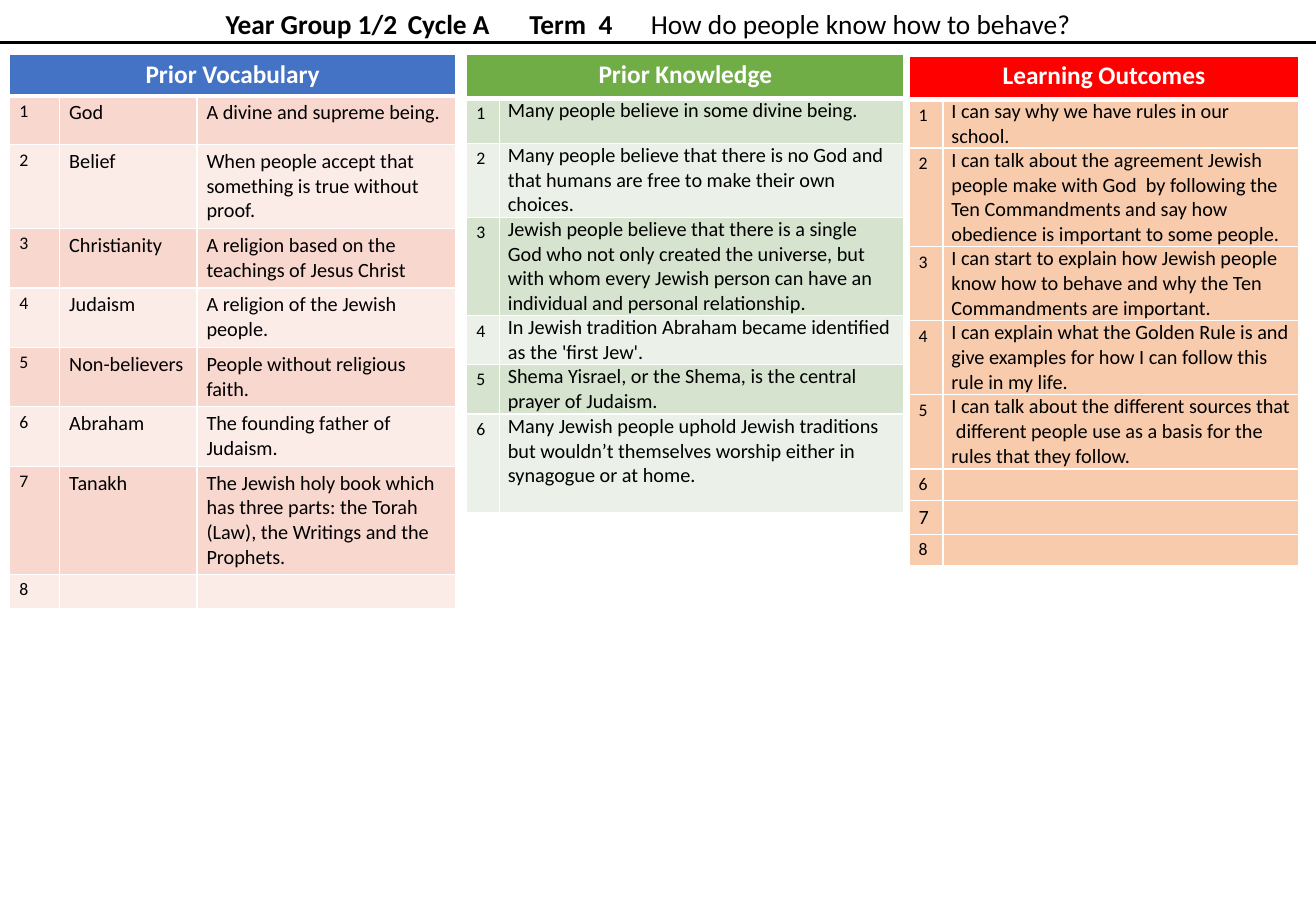
from dataclasses import dataclass

from lxml import etree
from pptx import Presentation
from pptx.dml.color import RGBColor
from pptx.enum import shapes, text
from pptx.oxml import ns
from pptx.util import Inches, Pt


@dataclass(frozen=True)
class Theme:
    font: str = "Calibri"
    black: str = "000000"
    white: str = "FFFFFF"
    blue: str = "4472C4"
    green: str = "70AD47"
    red: str = "FF0000"
    pinks: tuple = ("F8D7CE", "FCECE8")
    sages: tuple = ("D5E3CF", "EBF1E9")
    peach: tuple = ("F8CBAD",)
    title: float = 16.2
    head: float = 15
    body: float = 12
    num: float = 10.5


THEME = Theme()

VOCAB = [
    ("God", "A divine and supreme being."),
    ("Belief", "When people accept that something is true without proof."),
    ("Christianity", "A religion based on the teachings of Jesus Christ"),
    ("Judaism", "A religion of the Jewish people."),
    ("Non-believers", "People without religious faith."),
    ("Abraham", "The founding father of Judaism."),
    ("Tanakh", "The Jewish holy book which has three parts: the Torah (Law), "
               "the Writings and the Prophets."),
    ("", ""),
]
FACTS = [
    ("Many people believe in some divine being.",),
    ("Many people believe that there is no God and that humans are free "
     "to make their own choices.",),
    ("Jewish people believe that there is a single God who not only created "
     "the universe, but with whom every Jewish person can have an individual "
     "and personal relationship.",),
    ("In Jewish tradition Abraham became identified as the 'first Jew'.",),
    ("Shema Yisrael, or the Shema, is the central prayer of Judaism.",),
    ("Many Jewish people uphold Jewish traditions but wouldn’t themselves "
     "worship either in synagogue or at home.",),
]
GOALS = [
    ("I can say why we have rules in our school.",),
    ("I can talk about the agreement Jewish people make with God  by following "
     "the Ten Commandments and say how obedience is important to some people.",),
    ("I can start to explain how Jewish people know how to behave and why "
     "the Ten Commandments are important.",),
    ("I can explain what the Golden Rule is and give examples for how I can "
     "follow this rule in my life.",),
    ("I can talk about the different sources that  different people use as "
     "a basis for the rules that they follow.",),
    ("",), ("",), ("",),
]


def write(para, words, size=THEME.body, color=THEME.black, bold=False, align=None):
    """Add one formatted run, or just set the size of an empty paragraph."""
    if align is not None:
        para.alignment = align
    if not words:
        end = etree.SubElement(para._p, ns.qn("a:endParaRPr"))
        end.set("sz", str(int(size * 100)))
        return
    run = para.add_run()
    run.text = words
    run.font.name = THEME.font
    run.font.size = Pt(size)
    run.font.bold = bold
    run.font.color.rgb = RGBColor.from_string(color)


def style(cell, fill, base=1, pad=(0.08, 0.04)):
    """Set the borders, fill and margins of a cell."""
    props = cell._tc.get_or_add_tcPr()
    for side, width in (("L", 1), ("R", 1), ("T", 1), ("B", base)):
        line = etree.SubElement(props, ns.qn("a:ln" + side), w=str(Pt(width)))
        paint = etree.SubElement(line, ns.qn("a:solidFill"))
        etree.SubElement(paint, ns.qn("a:srgbClr"), val=THEME.white)
    cell.fill.solid()
    cell.fill.fore_color.rgb = RGBColor.from_string(fill)
    cell.margin_left = cell.margin_right = Inches(pad[0])
    cell.margin_top = cell.margin_bottom = Inches(pad[1])


def add_grid(slide, left, top, cols, rows, head, color, bands, items,
             pad=(0.08, 0.04), sizes=None):
    """Add a numbered table; sizes overrides the type size of some numbers."""
    frame = slide.shapes.add_table(len(rows), len(cols), Inches(left), Inches(top),
                                   Inches(sum(cols)), Inches(sum(rows)))
    grid = frame.table
    grid.horz_banding = False
    for col, width in zip(grid.columns, cols):
        col.width = Inches(width)
    for row, height in zip(grid.rows, rows):
        row.height = Inches(height)

    # Heading row
    for cell in grid.rows[0].cells:
        style(cell, color, base=3)
    grid.cell(0, 0).merge(grid.cell(0, len(cols) - 1))
    write(grid.cell(0, 0).text_frame.paragraphs[0], head, size=THEME.head,
          color=THEME.white, bold=True, align=text.PP_ALIGN.CENTER)

    # Numbered rows
    for num, item in enumerate(items, 1):
        fill = bands[(num - 1) % len(bands)]
        for col, words in enumerate((str(num), *item)):
            cell = grid.cell(num, col)
            small = col == 0 or not words
            size = THEME.num if small else THEME.body
            if col == 0:
                size = (sizes or {}).get(num, size)
            style(cell, fill, pad=(0.08, 0.04) if small else pad)
            write(cell.text_frame.paragraphs[0], words, size=size)


def add_title(slide):
    box = slide.shapes.add_textbox(Inches(0.82), Inches(0.07), Inches(9.07), Inches(0.3))
    frame = box.text_frame
    frame.word_wrap = True
    frame.vertical_anchor = text.MSO_ANCHOR.BOTTOM
    para = frame.paragraphs[0]
    para.line_spacing = 0.7
    write(para, "Year Group 1/2\tCycle A\tTerm  4\t", size=THEME.title, bold=True,
          align=text.PP_ALIGN.CENTER)
    write(para, "How do people know how to behave? ", size=THEME.title)


def add_rule(slide, top, width):
    rule = slide.shapes.add_connector(shapes.MSO_CONNECTOR.STRAIGHT, 0, Inches(top),
                                      width, Inches(top))
    rule.line.color.rgb = RGBColor.from_string(THEME.black)
    rule.line.width = Pt(1.5)
    etree.SubElement(rule._element.spPr, ns.qn("a:effectLst"))


def main():
    deck = Presentation()
    deck.slide_width, deck.slide_height = Inches(10.83), Inches(7.5)
    slide = deck.slides.add_slide(deck.slide_layouts[6])

    # Title and rule
    add_rule(slide, 0.35, deck.slide_width)
    add_title(slide)

    # Three tables
    add_grid(slide, 0.08, 0.45, (0.41, 1.13, 2.13),
             (0.34, 0.4, 0.69, 0.49, 0.49, 0.49, 0.49, 0.89, 0.28),
             "Prior Vocabulary", THEME.blue, THEME.pinks, VOCAB)
    add_grid(slide, 3.84, 0.45, (0.27, 3.33),
             (0.36, 0.37, 0.61, 0.81, 0.4, 0.41, 0.81),
             "Prior Knowledge", THEME.green, THEME.sages, FACTS, pad=(0.07, 0))
    add_grid(slide, 7.48, 0.46, (0.28, 2.93),
             (0.36, 0.4, 0.81, 0.61, 0.61, 0.61, 0.26, 0.28, 0.26),
             "Learning Outcomes", THEME.red, THEME.peach, GOALS, pad=(0.07, 0),
             sizes={7: THEME.body})

    deck.save("out.pptx")


if __name__ == "__main__":
    main()
